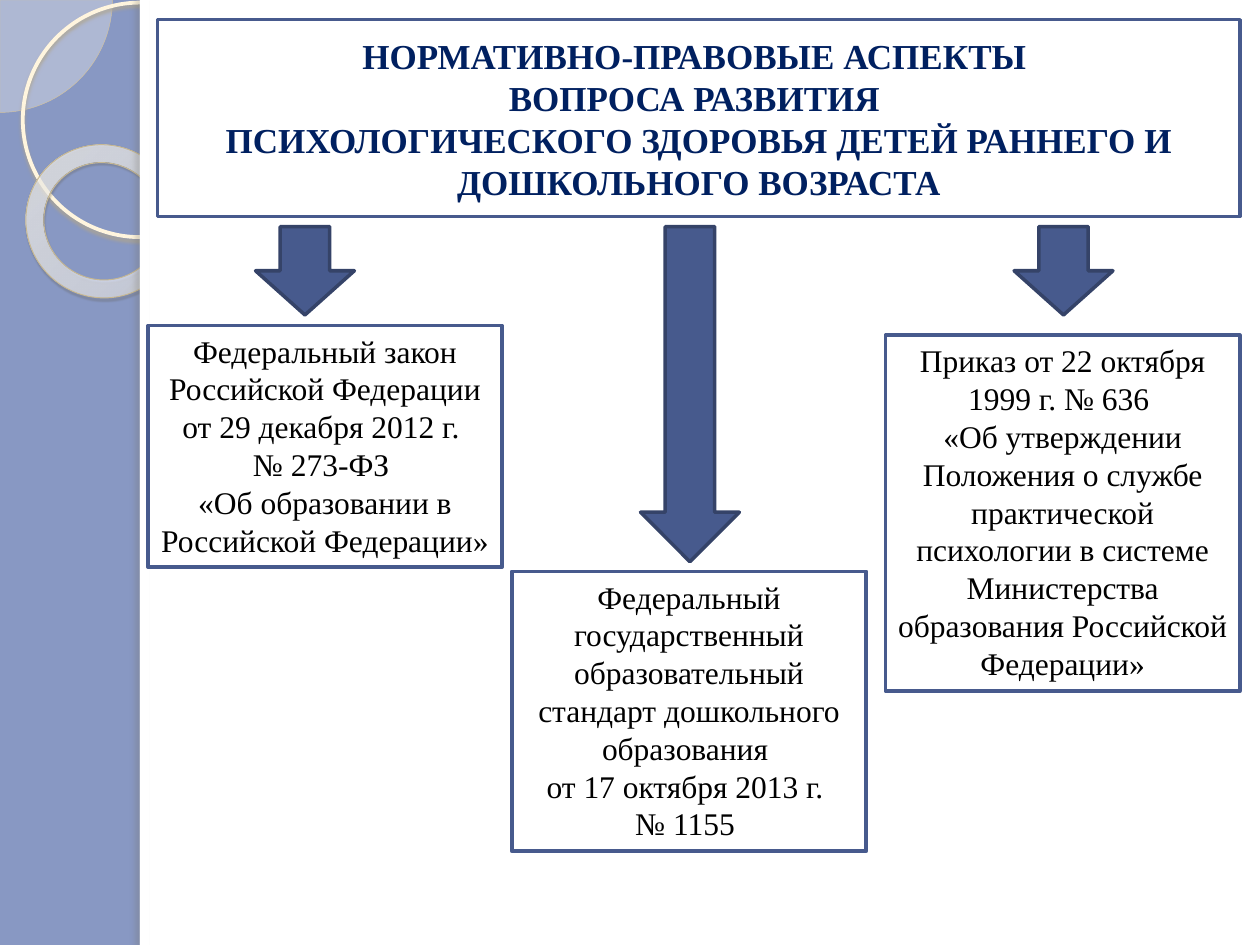
"""Build a slide on the legal framework for children's psychological health."""
from dataclasses import dataclass

from lxml import etree
from pptx import Presentation
from pptx import oxml
from pptx import util as u
from pptx.dml import color
from pptx.enum import shapes, text
from pptx.oxml import ns

KIND = shapes.MSO_SHAPE


@dataclass(frozen=True)
class Theme:
    """Colours, font and type sizes."""
    backdrop: str = "8898C3"
    paper: str = "FFFFFF"
    accent: str = "475A8D"
    accent_edge: str = "354368"
    heading: str = "002060"
    body: str = "000000"
    pie: str = "FEFAF4"
    pie_edge: str = "D3C39F"
    ring: str = "FFF5DE"
    ring_shadow: str = "B0A68F"
    donut_edge: str = "C7B893"
    donut_shadow: str = "5A5444"
    strip_shadow: str = "736F63"
    donut_stops: tuple = ((0, "FFFCF6", 70), (70, "FFFEFB", 55), (100, "F0D28E", 60))
    font: str = "Times New Roman"
    title_size: float = 20
    body_size: float = 18


def rgb(code):
    return color.RGBColor.from_string(code)


def apply(target, values):
    for name, value in values.items():
        setattr(target, name, value)


class SlideBuilder:
    """Holds the theme and the current slide and draws each kind of element."""

    def __init__(self, slide, theme):
        self.slide = slide
        self.theme = theme
        slide.background.fill.solid()
        slide.background.fill.fore_color.rgb = rgb(theme.backdrop)

    def figure(self, kind, box, fill=None, edge=None, width=2.0, alpha=None):
        figure = self.slide.shapes.add_shape(kind, *(u.Pt(value) for value in box))
        figure.shadow.inherit = False
        if fill:
            figure.fill.solid()
            figure.fill.fore_color.rgb = rgb(fill)
        else:
            figure.fill.background()
        if alpha is not None:
            tint = figure._element.spPr.find(f".//{ns.qn('a:srgbClr')}")
            self.opacity(tint, alpha)
        if edge:
            figure.line.color.rgb = rgb(edge)
            figure.line.width = u.Pt(width)
        else:
            figure.line.fill.background()
        return figure

    def opacity(self, tint, percent):
        etree.SubElement(tint, ns.qn("a:alpha"), val=str(percent * 1000))

    def shadow(self, figure, tone, alpha, blur, distance, angle):
        effects = figure._element.spPr.find(ns.qn("a:effectLst"))
        outer = etree.SubElement(
            effects, ns.qn("a:outerShdw"), blurRad=str(u.Pt(blur)),
            dist=str(u.Pt(distance)), dir=str(angle * 60000), rotWithShape="0")
        self.opacity(etree.SubElement(outer, ns.qn("a:srgbClr"), val=tone), alpha)

    def radial_fill(self, figure, stops, focus):
        stop_xml = "".join(
            f'<a:gs pos="{place * 1000}"><a:srgbClr val="{tone}">'
            f'<a:alpha val="{alpha * 1000}"/></a:srgbClr></a:gs>'
            for place, tone, alpha in stops)
        sides = " ".join(f'{side}="{part * 1000}"' for side, part in zip("ltrb", focus))
        gradient = oxml.parse_xml(
            f'<a:gradFill {ns.nsdecls("a")} rotWithShape="1"><a:gsLst>{stop_xml}</a:gsLst>'
            f'<a:path path="circle"><a:fillToRect {sides}/></a:path></a:gradFill>')
        properties = figure._element.spPr
        properties.replace(properties.find(ns.qn("a:noFill")), gradient)

    def decoration(self):
        theme = self.theme
        pie = self.figure(KIND.PIE, (-64.25, -64.25, 128.5, 128.5),
                          theme.pie, theme.pie_edge, 0.25, alpha=33)
        pie.adjustments[0], pie.adjustments[1] = 0, 54
        ring = self.figure(KIND.OVAL, (13, 1.5, 134, 134), edge=theme.ring, width=2.15)
        self.shadow(ring, theme.ring_shadow, 85, 2, 2, 90)
        donut = self.figure(KIND.DONUT, (14.5, 83, 88.5, 87), edge=theme.donut_edge, width=0.58)
        donut.adjustments[0] = 0.118
        donut.rotation = 38.6
        self.radial_fill(donut, theme.donut_stops, (-408, -50, 508, 150))
        self.shadow(donut, theme.donut_shadow, 35, 1, 1.2, 75)
        self.figure(KIND.RECTANGLE, (80, 0, 640, 540), theme.paper)
        strip = self.figure(KIND.RECTANGLE, (80, 0, 5.5, 540), theme.paper)
        self.shadow(strip, theme.strip_shadow, 25, 3, 3, 180)

    def text_box(self, box, wording, frame_format, font_format, tone):
        panel = self.figure(KIND.RECTANGLE, box, self.theme.paper, self.theme.accent)
        frame = panel.text_frame
        frame.text = wording
        apply(frame, {"word_wrap": True, **frame_format})
        for paragraph in frame.paragraphs:
            paragraph.alignment = text.PP_ALIGN.CENTER
            for run in paragraph.runs:
                apply(run.font, {"name": self.theme.font, **font_format})
                run.font.color.rgb = rgb(tone)

    def title(self, box, wording):
        self.text_box(box, wording, {"vertical_anchor": text.MSO_ANCHOR.MIDDLE},
                      {"size": u.Pt(self.theme.title_size), "bold": True}, self.theme.heading)

    def document(self, box, wording):
        self.text_box(box, wording,
                      {"vertical_anchor": text.MSO_ANCHOR.TOP,
                       "auto_size": text.MSO_AUTO_SIZE.SHAPE_TO_FIT_TEXT},
                      {"size": u.Pt(self.theme.body_size)}, self.theme.body)

    def arrow(self, left, height):
        self.figure(KIND.DOWN_ARROW, (left, 129.5, 56.5, height),
                    self.theme.accent, self.theme.accent_edge)


DOCUMENTS = (
    (84.5, 186, 138, 146, 50.5,
     "Федеральный закон Российской Федерации от 29 декабря 2012 г. \n"
     "№ 273-ФЗ \n«Об образовании в Российской Федерации» "),
    (292.5, 326.5, 160, 366, 191.5,
     "Федеральный государственный образовательный стандарт дошкольного образования \n"
     "от 17 октября 2013 г. \n№ 1155 "),
    (506, 191.5, 203.5, 579.5, 50.5,
     "Приказ от 22 октября 1999 г. № 636 \n"
     "«Об утверждении Положения о службе практической психологии в системе "
     "Министерства образования Российской Федерации»"),
)


def main():
    deck = Presentation()
    apply(deck, {"slide_width": u.Pt(720), "slide_height": u.Pt(540)})
    builder = SlideBuilder(deck.slides.add_slide(deck.slide_layouts[6]), Theme())
    builder.decoration()
    builder.title((90, 11.25, 618.5, 112.5),
                  "НОРМАТИВНО-ПРАВОВЫЕ АСПЕКТЫ \vВОПРОСА РАЗВИТИЯ \v"
                  "ПСИХОЛОГИЧЕСКОГО ЗДОРОВЬЯ ДЕТЕЙ РАННЕГО И ДОШКОЛЬНОГО ВОЗРАСТА")
    for left, top, height, arrow_left, arrow_height, wording in DOCUMENTS:
        builder.arrow(arrow_left, arrow_height)
        builder.document((left, top, 202.5, height), wording)
    deck.save("out.pptx")


if __name__ == "__main__":
    main()
